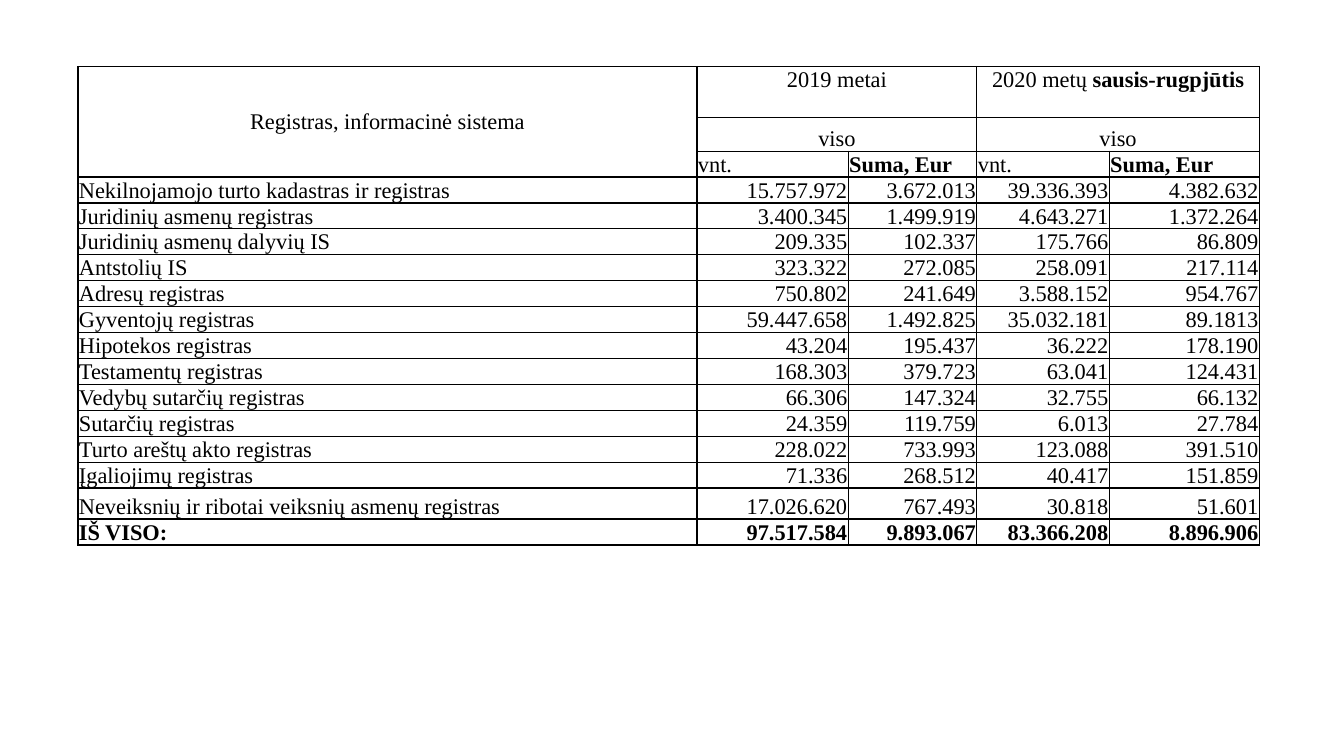
import dataclasses

import lxml.etree
import pptx
import pptx.dml.color
import pptx.enum.text
import pptx.oxml.ns
import pptx.util

ALIGN = pptx.enum.text.PP_ALIGN
ANCHOR = pptx.enum.text.MSO_ANCHOR


@dataclasses.dataclass(frozen=True)
class Theme:
    """Type, colours and line weight of the slide."""
    font: str = "Times New Roman"
    size: float = 16
    ink: str = "000000"
    border: float = 1


THEME = Theme()
SLIDE_WIDTH = pptx.util.Inches(13.33)
SLIDE_HEIGHT = pptx.util.Inches(7.5)
TABLE_LEFT, TABLE_TOP, TABLE_WIDTH = 0.058, 0.088, 0.879
COLUMN_SHARES = (0.524, 0.128, 0.109, 0.112, 0.127)
TEXT_ROW = 0.034
TALL_ROWS = {0: 0.068, 1: 0.044, 15: 0.041}
HEADER_ROWS = 3

REGISTERS = (
    ("Nekilnojamojo turto kadastras ir registras", "15.757.972", "3.672.013", "39.336.393", "4.382.632"),
    ("Juridinių asmenų registras", "3.400.345", "1.499.919", "4.643.271", "1.372.264"),
    ("Juridinių asmenų dalyvių IS", "209.335", "102.337", "175.766", "86.809"),
    ("Antstolių IS", "323.322", "272.085", "258.091", "217.114"),
    ("Adresų registras", "750.802", "241.649", "3.588.152", "954.767"),
    ("Gyventojų registras", "59.447.658", "1.492.825", "35.032.181", "89.1813"),
    ("Hipotekos registras", "43.204", "195.437", "36.222", "178.190"),
    ("Testamentų registras", "168.303", "379.723", "63.041", "124.431"),
    ("Vedybų sutarčių registras", "66.306", "147.324", "32.755", "66.132"),
    ("Sutarčių registras", "24.359", "119.759", "6.013", "27.784"),
    ("Turto areštų akto registras", "228.022", "733.993", "123.088", "391.510"),
    ("Įgaliojimų registras", "71.336", "268.512", "40.417", "151.859"),
    ("Neveiksnių ir ribotai veiksnių asmenų registras", "17.026.620", "767.493", "30.818", "51.601"),
    ("IŠ VISO:", "97.517.584", "9.893.067", "83.366.208", "8.896.906"),
)


def add_borders(cell):
    """Draw a solid line on all four sides of a cell."""
    properties = cell._tc.get_or_add_tcPr()
    qualify = pptx.oxml.ns.qn
    for position, side in enumerate(("a:lnL", "a:lnR", "a:lnT", "a:lnB")):
        line = lxml.etree.Element(qualify(side), w=str(pptx.util.Pt(THEME.border)))
        fill = lxml.etree.SubElement(line, qualify("a:solidFill"))
        lxml.etree.SubElement(fill, qualify("a:srgbClr"), val=THEME.ink)
        properties.insert(position, line)


def style_cell(cell):
    """Give a cell its borders, margins and type, with no fill."""
    cell.fill.background()
    add_borders(cell)
    cell.margin_left = cell.margin_right = cell.margin_top = pptx.util.Inches(0.01)
    cell.margin_bottom = 0
    cell.vertical_anchor = ANCHOR.BOTTOM
    font = cell.text_frame.paragraphs[0].font
    font.name = THEME.font
    font.size = pptx.util.Pt(THEME.size)
    font.color.rgb = pptx.dml.color.RGBColor.from_string(THEME.ink)
    font.bold = False


def write(cell, text, align=ALIGN.LEFT, bold=False):
    """Write one paragraph into a cell and return it."""
    para = cell.text_frame.paragraphs[0]
    para.add_run().text = text
    para.alignment = align
    para.font.bold = bold
    return para


def add_grid(page):
    """Add the bordered table with its column and row sizes."""
    heights = [TALL_ROWS.get(row, TEXT_ROW) for row in range(HEADER_ROWS + len(REGISTERS))]
    width = int(SLIDE_WIDTH * TABLE_WIDTH)
    table = page.shapes.add_table(
        len(heights), len(COLUMN_SHARES), int(SLIDE_WIDTH * TABLE_LEFT),
        int(SLIDE_HEIGHT * TABLE_TOP), width, int(SLIDE_HEIGHT * sum(heights))).table
    table.first_row = table.horz_banding = False
    for column, share in zip(table.columns, COLUMN_SHARES):
        column.width = int(width * share)
    for row, height in zip(table.rows, heights):
        row.height = int(SLIDE_HEIGHT * height)
        for cell in row.cells:
            style_cell(cell)
    return table


def fill_header(table):
    """Merge and label the three header rows."""
    corner = table.cell(0, 0)
    corner.merge(table.cell(HEADER_ROWS - 1, 0))
    write(corner, "Registras, informacinė sistema", ALIGN.CENTER)
    corner.vertical_anchor = ANCHOR.MIDDLE
    for left, year, months in ((1, "2019 metai", ""), (3, "2020 metų ", "sausis-rugpjūtis")):
        for row, text in enumerate((year, "viso")):
            cell = table.cell(row, left)
            cell.merge(table.cell(row, left + 1))
            write(cell, text, ALIGN.CENTER)
        period = table.cell(0, left)
        period.vertical_anchor = ANCHOR.TOP
        if months:
            span = period.text_frame.paragraphs[0].add_run()
            span.text = months
            span.font.bold = True
        write(table.cell(2, left), "vnt.")
        write(table.cell(2, left + 1), "Suma, Eur", bold=True)


def fill_registers(table):
    """Write one row per register, with the total in bold."""
    for row, record in enumerate(REGISTERS, HEADER_ROWS):
        for column, text in enumerate(record):
            write(table.cell(row, column), text,
                  ALIGN.RIGHT if column else ALIGN.LEFT, record is REGISTERS[-1])


def main():
    """Build the slide and save it."""
    deck = pptx.Presentation()
    deck.slide_width, deck.slide_height = SLIDE_WIDTH, SLIDE_HEIGHT
    page = deck.slides.add_slide(deck.slide_layouts.get_by_name("Blank"))
    table = add_grid(page)
    fill_header(table)
    fill_registers(table)
    deck.save("out.pptx")


if __name__ == "__main__":
    main()
